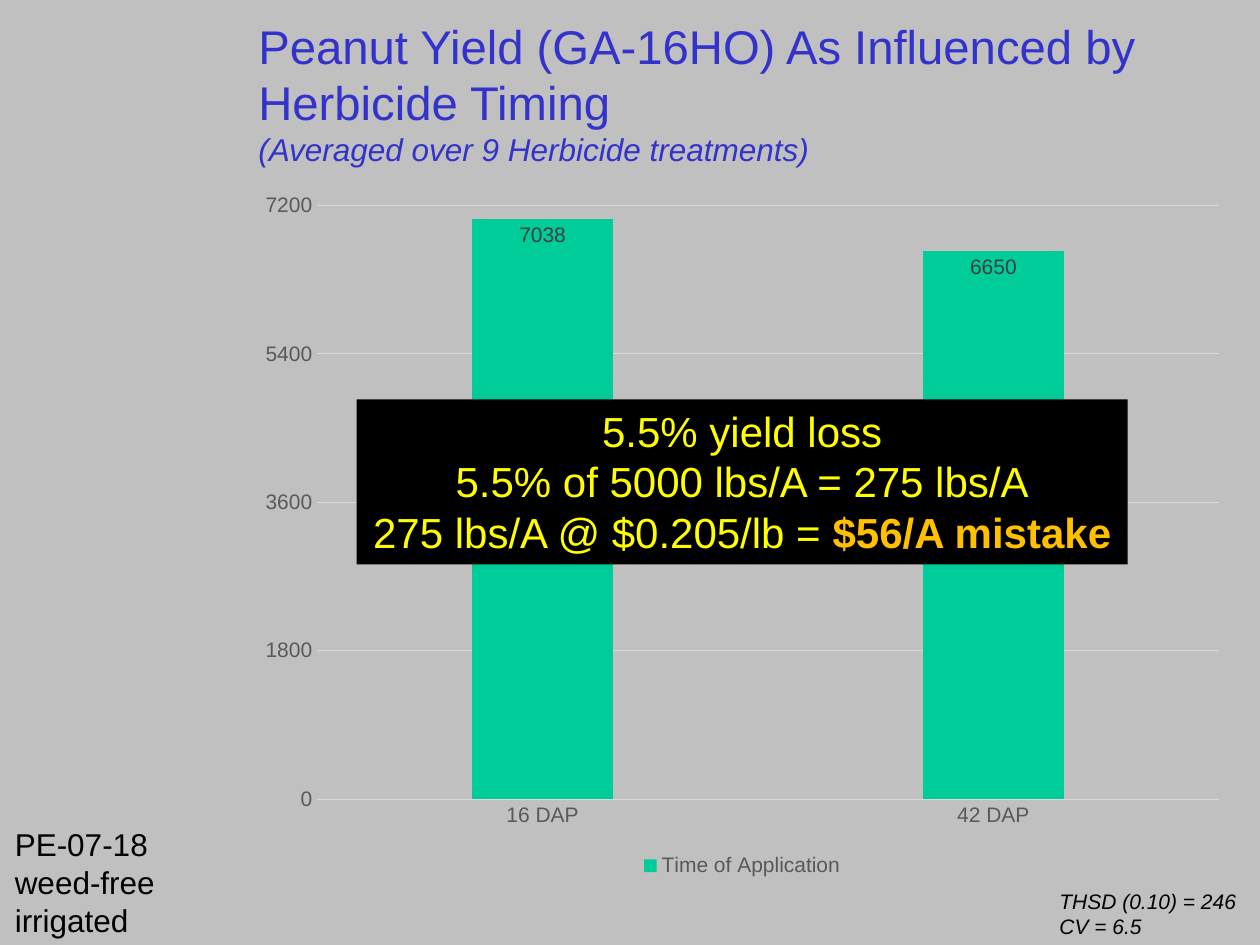
from dataclasses import dataclass

from pptx import Presentation
from pptx.chart.data import CategoryChartData
from pptx.dml.color import RGBColor
from pptx.enum.chart import (XL_CHART_TYPE, XL_LABEL_POSITION,
                             XL_LEGEND_POSITION, XL_TICK_MARK)
from pptx.enum.shapes import MSO_SHAPE
from pptx.enum.text import MSO_ANCHOR, MSO_AUTO_SIZE, PP_ALIGN
from pptx.util import Pt

FONT = "Arial"
GRID, AXIS_TEXT = "D9D9D9", "595959"


@dataclass
class Note:
    box: tuple[float, float, float, float]  # left, top, width, height in points
    lines: list[str]
    size: float
    color: str = "000000"
    italic: bool = False
    wrap: bool = False
    align: PP_ALIGN = PP_ALIGN.LEFT
    fill: str | None = None


def rgb(value: str) -> RGBColor:
    return RGBColor.from_string(value)


def set_font(font, size: float, color: str, italic: bool = False) -> None:
    font.name = FONT
    font.size = Pt(size)
    font.color.rgb = rgb(color)
    font.italic = italic


def draw_note(slide, note: Note):
    """Draw lines of text, on a filled rectangle if the note has a fill."""
    box = [Pt(v) for v in note.box]
    if note.fill:
        shape = slide.shapes.add_shape(MSO_SHAPE.RECTANGLE, *box)
        shape.shadow.inherit = False
        shape.fill.solid()
        shape.fill.fore_color.rgb = rgb(note.fill)
        shape.line.fill.background()
    else:
        shape = slide.shapes.add_textbox(*box)
    frame = shape.text_frame
    frame.word_wrap = note.wrap
    frame.auto_size = MSO_AUTO_SIZE.SHAPE_TO_FIT_TEXT
    frame.vertical_anchor = MSO_ANCHOR.TOP
    frame.text = "\n".join(note.lines)
    for paragraph in frame.paragraphs:
        paragraph.alignment = note.align
        set_font(paragraph.font, note.size, note.color, note.italic)
    return frame


def draw_title(slide) -> None:
    title = slide.shapes.title
    title.left, title.top, title.width, title.height = (
        Pt(140.4), Pt(7.9), Pt(573.8), Pt(90))
    frame = title.text_frame
    frame.auto_size = MSO_AUTO_SIZE.NONE
    frame.word_wrap = True
    frame.vertical_anchor = MSO_ANCHOR.MIDDLE
    paragraph = frame.paragraphs[0]
    paragraph.alignment = PP_ALIGN.LEFT
    set_font(paragraph.font, 27, "3333CC")
    paragraph.add_run().text = (
        "Peanut Yield (GA-16HO) As Influenced by Herbicide Timing")
    paragraph.add_line_break()
    subtitle = paragraph.add_run()
    subtitle.text = "(Averaged over 9 Herbicide treatments)"
    set_font(subtitle.font, 18, "3333CC", italic=True)


def draw_yield_chart(slide) -> None:
    data = CategoryChartData()
    data.categories = ["16 DAP", "42 DAP"]
    data.add_series("Time of Application", [7038, 6650])
    chart = slide.shapes.add_chart(
        XL_CHART_TYPE.COLUMN_CLUSTERED,
        Pt(140.4), Pt(103), Pt(567.4), Pt(401), data).chart
    set_font(chart.font, 10, "000000")
    chart.has_title = False

    # Axes
    for axis in (chart.category_axis, chart.value_axis):
        axis.major_tick_mark = axis.minor_tick_mark = XL_TICK_MARK.NONE
        set_font(axis.tick_labels.font, 12, AXIS_TEXT)
    yields = chart.value_axis
    yields.minimum_scale, yields.maximum_scale, yields.major_unit = 0, 7200, 1800
    yields.format.line.fill.background()
    for line in (chart.category_axis.format.line,
                 yields.major_gridlines.format.line):
        line.color.rgb = rgb(GRID)
        line.width = Pt(0.75)

    # Legend
    chart.has_legend = True
    chart.legend.position = XL_LEGEND_POSITION.BOTTOM
    chart.legend.include_in_layout = False
    set_font(chart.legend.font, 12, AXIS_TEXT)

    # Columns and their values
    plot = chart.plots[0]
    plot.vary_by_categories = False
    plot.gap_width, plot.overlap = 219, -27
    timing = plot.series[0]
    timing.format.fill.solid()
    timing.format.fill.fore_color.rgb = rgb("00CC99")
    labels = timing.data_labels
    labels.show_value = True
    labels.position = XL_LABEL_POSITION.INSIDE_END
    set_font(labels.font, 12, "404040")


def main() -> None:
    prs = Presentation()
    prs.slide_width, prs.slide_height = Pt(720), Pt(540)
    slide = prs.slides.add_slide(prs.slide_layouts[5])
    slide.background.fill.solid()
    slide.background.fill.fore_color.rgb = rgb("C0C0C0")

    draw_title(slide)
    draw_yield_chart(slide)

    # Trial details and statistics
    draw_note(slide, Note((1.4, 468, 95.8, 72.7),
                          ["PE-07-18", "weed-free", "irrigated"], 18, wrap=True))
    draw_note(slide, Note((598.3, 504, 116.6, 36),
                          ["THSD (0.10) = 246", "CV = 6.5"], 12, italic=True))

    # Cost of the yield loss
    loss = draw_note(slide, Note(
        (203.8, 228.2, 440.6, 94.3),
        ["5.5% yield loss", "5.5% of 5000 lbs/A = 275 lbs/A",
         "275 lbs/A @ $0.205/lb = "],
        24, "FFFF00", align=PP_ALIGN.CENTER, fill="000000"))
    mistake = loss.paragraphs[-1].add_run()
    mistake.text = "$56/A mistake"
    mistake.font.bold = True
    mistake.font.color.rgb = rgb("FFC000")

    prs.save("out.pptx")


if __name__ == "__main__":
    main()
